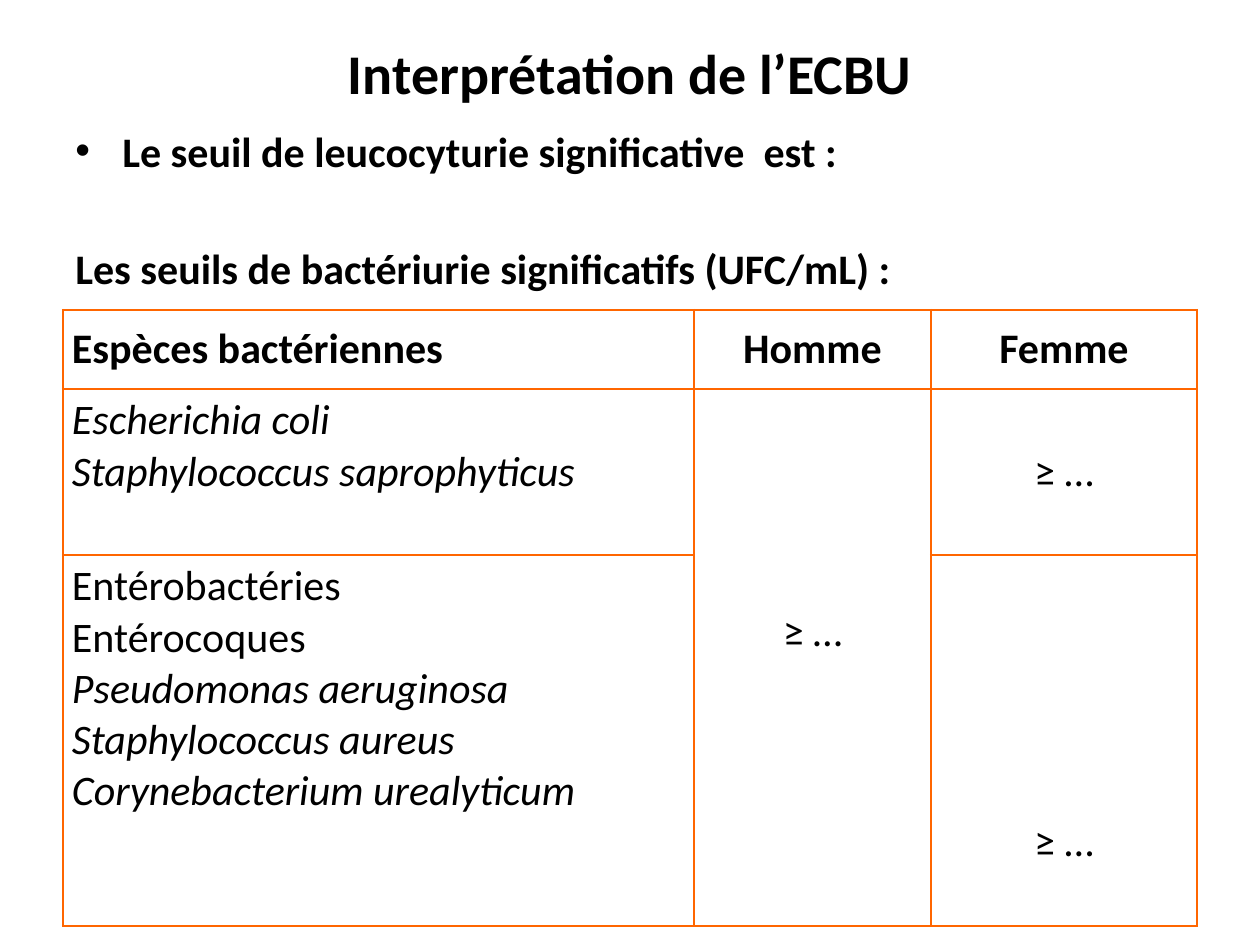
from pptx import Presentation
from pptx.util import Pt
from pptx.dml.color import RGBColor as RGB
from pptx.enum.text import PP_ALIGN as AL, MSO_ANCHOR as AN
from pptx.oxml.ns import qn
from lxml.etree import SubElement as Sub

PX = 914400 / 126
COL = {"text": "000000", "line": "FF6600"}
LINE = 51  # height of one 24 pt line


def px(n):
    return int(n * PX)


def style(par, text, size=24, bold=False, ital=False, align=AL.LEFT):
    par.text = text
    par.alignment = align
    font = par.font
    font.name, font.size = "Calibri", Pt(size)
    font.bold, font.italic = bold, ital
    font.color.rgb = RGB.from_string(COL["text"])


def add_box(slide, x, y, w, h, anchor=AN.TOP):
    frame = slide.shapes.add_textbox(px(x), px(y), px(w), px(h)).text_frame
    frame.word_wrap = True
    frame.vertical_anchor = anchor
    return frame


def add_bullet(par, hang):
    props = par._p.get_or_add_pPr()
    props.set("marL", str(px(hang)))
    props.set("indent", str(-px(hang)))
    Sub(props, qn("a:buFont"), typeface="Arial")
    Sub(props, qn("a:buChar"), char="•")


def set_edges(cell):
    props = cell._tc.get_or_add_tcPr()
    for i, side in enumerate(("lnL", "lnR", "lnT", "lnB")):
        line = props.makeelement(qn("a:" + side), {"w": str(Pt(1.5))})
        fill = Sub(line, qn("a:solidFill"))
        Sub(fill, qn("a:srgbClr"), val=COL["line"])
        props.insert(i, line)


def fill_cell(cell, items, anchor=AN.MIDDLE, above=0, below=0, **look):
    """Items are (text, italic) pairs; above and below count free lines."""
    cell.vertical_anchor = anchor
    cell.margin_left = cell.margin_right = px(9)
    cell.margin_top = px(6 + above * LINE)
    cell.margin_bottom = px(6 + below * LINE)
    frame = cell.text_frame
    for i, (text, ital) in enumerate(items):
        par = frame.add_paragraph() if i else frame.paragraphs[0]
        style(par, text, ital=ital, **look)


def add_grid(slide, x, y, cols, rows):
    table = slide.shapes.add_table(len(rows), len(cols), px(x), px(y),
                                   px(sum(cols)), px(sum(rows))).table
    table.first_row = table.horz_banding = False
    for col, w in zip(table.columns, cols):
        col.width = px(w)
    for row, h in zip(table.rows, rows):
        row.height = px(h)
    for cell in table.iter_cells():
        cell.fill.background()
        set_edges(cell)
    return table


def main():
    prs = Presentation()
    prs.slide_width, prs.slide_height = px(1260), px(945)
    slide = prs.slides.add_slide(prs.slide_layouts[6])

    # Title
    frame = add_box(slide, 63, 38, 1134, 68, AN.MIDDLE)
    style(frame.paragraphs[0], "Interprétation de l’ECBU", 32, True,
          align=AL.CENTER)

    # Thresholds
    frame = add_box(slide, 63, 119, 1134, 190)
    first, second = frame.paragraphs[0], frame.add_paragraph()
    add_bullet(first, 47)
    style(first, "Le seuil de leucocyturie significative  est :",
          bold=True, align=AL.JUSTIFY)
    second.space_before = Pt(38)
    style(second, "Les seuils de bactériurie significatifs (UFC/mL) :",
          bold=True, align=AL.JUSTIFY)

    # Table: header row
    table = add_grid(slide, 63, 310, (631, 237, 266), (79, 166, 371))
    heads = ("Espèces bactériennes", "Homme", "Femme")
    for i, head in enumerate(heads):
        fill_cell(table.cell(0, i), [(head, False)], bold=True,
                  align=AL.CENTER if i else AL.LEFT)

    # Table: species
    fill_cell(table.cell(1, 0), [("Escherichia coli", True),
                                 ("Staphylococcus saprophyticus", True)],
              AN.TOP)
    fill_cell(table.cell(2, 0), [("Entérobactéries", False),
                                 ("Entérocoques", False),
                                 ("Pseudomonas aeruginosa", True),
                                 ("Staphylococcus aureus", True),
                                 ("Corynebacterium urealyticum", True)],
              AN.TOP)

    # Table: limits, the men's one over two rows
    table.cell(1, 1).merge(table.cell(2, 1))
    for row, col, above, below in ((1, 1, 0, 1), (1, 2, 0, 0), (2, 2, 5, 1)):
        fill_cell(table.cell(row, col), [("≥ …", False)], above=above,
                  below=below, align=AL.CENTER)

    prs.save("out.pptx")


if __name__ == "__main__":
    main()
